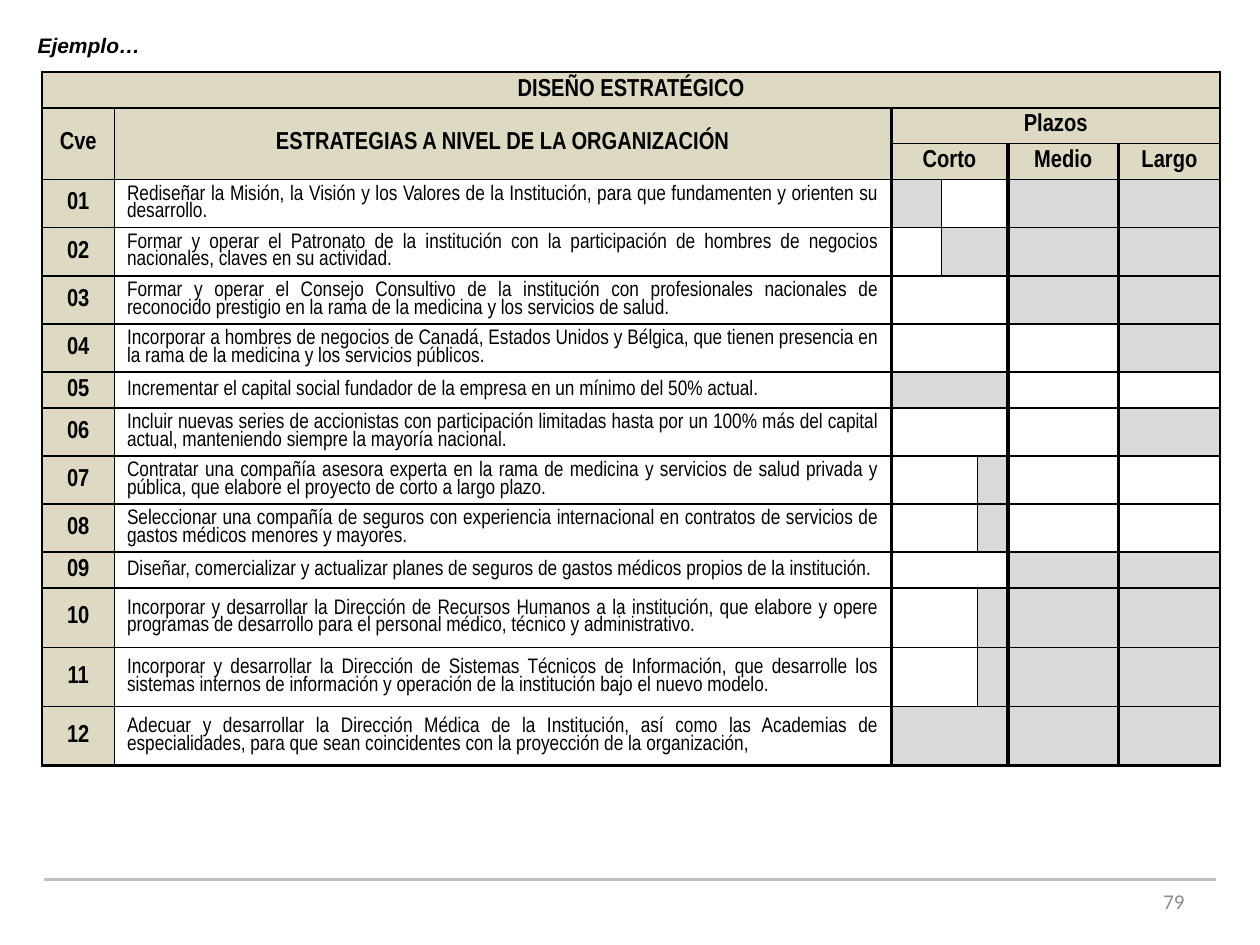
import pptx
import pptx.util
import pptx.dml.color
import pptx.enum.shapes
import pptx.enum.text
import pptx.oxml.ns
from lxml import etree

Pt = pptx.util.Pt
ALIGN = pptx.enum.text.PP_ALIGN
ANCHOR = pptx.enum.text.MSO_ANCHOR

# Content
LABEL = "Ejemplo…"
PAGE = "79"

# Header cells: text, row, column, row span, column span, anchor
HEADERS = [
    ("DISEÑO ESTRATÉGICO", 0, 0, 1, 7, ANCHOR.MIDDLE),
    ("Cve", 1, 0, 2, 1, ANCHOR.MIDDLE),
    ("ESTRATEGIAS A NIVEL DE LA ORGANIZACIÓN", 1, 1, 2, 1, ANCHOR.MIDDLE),
    ("Plazos", 1, 2, 1, 5, ANCHOR.TOP),
    ("Corto", 2, 2, 1, 3, ANCHOR.TOP),
    ("Medio", 2, 5, 1, 1, ANCHOR.TOP),
    ("Largo", 2, 6, 1, 1, ANCHOR.TOP),
]

# Strategy, row height, term cells: one mark per column spanned, # is shaded
STRATEGIES = [
    ("Rediseñar la Misión, la Visión y los Valores de la Institución, para que "
     "fundamenten y orienten su desarrollo.", 27.5, "# -- # #"),
    ("Formar y operar el Patronato de la institución con la participación de hombres "
     "de negocios nacionales, claves en su actividad.", 27.5, "- ## # #"),
    ("Formar y operar el Consejo Consultivo de la institución con profesionales "
     "nacionales de reconocido prestigio en la rama de la medicina y los servicios "
     "de salud.", 27.5, "--- # #"),
    ("Incorporar a hombres de negocios de Canadá, Estados Unidos y Bélgica, que tienen "
     "presencia en la rama de la medicina y los servicios públicos.", 27.5, "--- - #"),
    ("Incrementar el capital social fundador de la empresa en un mínimo del 50% actual.",
     20.5, "### - -"),
    ("Incluir nuevas series de accionistas con participación limitadas hasta por un "
     "100% más del capital actual, manteniendo siempre la mayoría nacional.",
     27.5, "--- - #"),
    ("Contratar una compañía asesora experta en la rama de medicina y servicios de "
     "salud privada y pública, que elabore el proyecto de corto a largo plazo.",
     27.5, "-- # - -"),
    ("Seleccionar una compañía de seguros con experiencia internacional en contratos "
     "de servicios de gastos médicos menores y mayores.", 27.5, "-- # - -"),
    ("Diseñar, comercializar y actualizar planes de seguros de gastos médicos propios "
     "de la institución.", 20.5, "--- # #"),
    ("Incorporar y desarrollar la Dirección de Recursos Humanos a la institución, que "
     "elabore y opere programas de desarrollo para el personal médico, técnico y "
     "administrativo.", 33.84, "-- # # #"),
    ("Incorporar y desarrollar la Dirección de Sistemas Técnicos de Información, que "
     "desarrolle los sistemas internos de información y operación de la institución "
     "bajo el nuevo modelo.", 33.84, "-- # # #"),
    ("Adecuar y desarrollar la Dirección Médica de la Institución, así como las "
     "Academias de especialidades, para que sean coincidentes con la proyección de la "
     "organización,", 33.84, "### # #"),
]

THEME = {
    "head": "DDD9C3", "shade": "D9D9D9", "plain": "FFFFFF", "ink": "000000",
    "rule": "BFBFBF", "page": "8C8C8C",
    "font": "Arial Narrow", "head_size": 14, "body_size": 12,
}

# Geometry
LEFT, TOP = 24, 41.1
COLS = [41.4, 443.9, 28.8, 20.6, 17.1, 63.4, 58]
HEAD_ROWS = [20.5] * 3
ROWS = HEAD_ROWS + [height for _, height, _ in STRATEGIES]
EDGES = [1.5, 1, 2.25, 1, 1, 2.25, 2.25, 1.5]  # vertical rule widths
OUTER, INNER = 1.5, 1                          # horizontal rule widths


def rgb(name):
    return pptx.dml.color.RGBColor.from_string(THEME[name])


def add_run(p, text, size, color="ink", font=THEME["font"], bold=False, italic=False):
    r = p.add_run()
    r.text = text
    r.font.name, r.font.size = font, Pt(size)
    r.font.bold, r.font.italic = bold, italic
    r.font.color.rgb = rgb(color)


def add_label(s, left, top, width, height, wrap, align):
    tf = s.shapes.add_textbox(Pt(left), Pt(top), Pt(width), Pt(height)).text_frame
    tf.word_wrap = wrap
    tf.vertical_anchor = ANCHOR.MIDDLE
    p = tf.paragraphs[0]
    p.alignment = align
    return p


def sub(parent, tag, **attrs):
    return etree.SubElement(parent, pptx.oxml.ns.qn(tag), attrs)


def set_borders(cell, widths):
    tc_pr = cell._tc.get_or_add_tcPr()
    for tag, width in zip(("a:lnL", "a:lnR", "a:lnT", "a:lnB"), widths):
        fill = sub(sub(tc_pr, tag, w=str(int(Pt(width)))), "a:solidFill")
        sub(fill, "a:srgbClr", val=THEME["ink"])


def add_cell(table, row, col, fill, row_span=1, col_span=1, anchor=ANCHOR.MIDDLE):
    """Merge, rule and fill one cell; return its paragraph."""
    end_row, end_col = row + row_span, col + col_span
    widths = (EDGES[col], EDGES[end_col],
              OUTER if row == 0 else INNER,
              OUTER if end_row == len(ROWS) else INNER)
    origin = table.cell(row, col)
    if row_span * col_span > 1:
        origin.merge(table.cell(end_row - 1, end_col - 1))
    for i in range(row, end_row):
        for j in range(col, end_col):
            cell = table.cell(i, j)
            cell.margin_top = Pt(3.6 if anchor == ANCHOR.TOP else 0)
            cell.margin_bottom = Pt(0)
            set_borders(cell, widths)
            cell.fill.solid()
            cell.fill.fore_color.rgb = rgb(fill)
            # Keeps empty cells from stretching their row
            end = sub(cell.text_frame.paragraphs[0]._p, "a:endParaRPr",
                      sz=str(THEME["body_size"] * 100))
            sub(end, "a:latin", typeface=THEME["font"])
    origin.vertical_anchor = anchor
    return origin.text_frame.paragraphs[0]


prs = pptx.Presentation()
prs.slide_width, prs.slide_height = Pt(720), Pt(540)
s = prs.slides.add_slide(prs.slide_layouts[6])

# Footer rule and page number
rule = s.shapes.add_connector(pptx.enum.shapes.MSO_CONNECTOR.STRAIGHT,
                              Pt(25.2), Pt(502.6), Pt(694.8), Pt(502.6))
rule.line.color.rgb = rgb("rule")
rule.line.width = Pt(2)
sub(rule._element.spPr, "a:effectLst")
add_run(add_label(s, 516.2, 500.4, 167.8, 28.8, True, ALIGN.RIGHT),
        PAGE, 12, "page", "Calibri")

# Table grid
table = s.shapes.add_table(len(ROWS), len(COLS), Pt(LEFT), Pt(TOP),
                           Pt(sum(COLS)), Pt(sum(ROWS))).table
table.first_row = table.horz_banding = False
for column, width in zip(table.columns, COLS):
    column.width = Pt(width)
for table_row, height in zip(table.rows, ROWS):
    table_row.height = Pt(height)

# Header cells
for text, row, col, row_span, col_span, anchor in HEADERS:
    p = add_cell(table, row, col, "head", row_span, col_span, anchor)
    p.alignment = ALIGN.CENTER
    add_run(p, text, THEME["head_size"], bold=True)

# Strategy rows: key, text, then the term cells
for number, (text, _, terms) in enumerate(STRATEGIES, 1):
    row = len(HEAD_ROWS) + number - 1
    p = add_cell(table, row, 0, "head")
    p.alignment, p.line_spacing = ALIGN.CENTER, 0.9
    add_run(p, f"{number:02d}", THEME["head_size"], bold=True)

    p = add_cell(table, row, 1, "plain")
    p.alignment, p.line_spacing = ALIGN.JUSTIFY, 0.9
    add_run(p, text, THEME["body_size"])

    col = 2
    for term in terms.split():
        add_cell(table, row, col, "shade" if "#" in term else "plain", 1, len(term))
        col += len(term)

# Slide label
add_run(add_label(s, 14.4, 15.1, 74.2, 21.6, False, ALIGN.LEFT),
        LABEL, 12, font="Arial", bold=True, italic=True)

prs.save("out.pptx")
